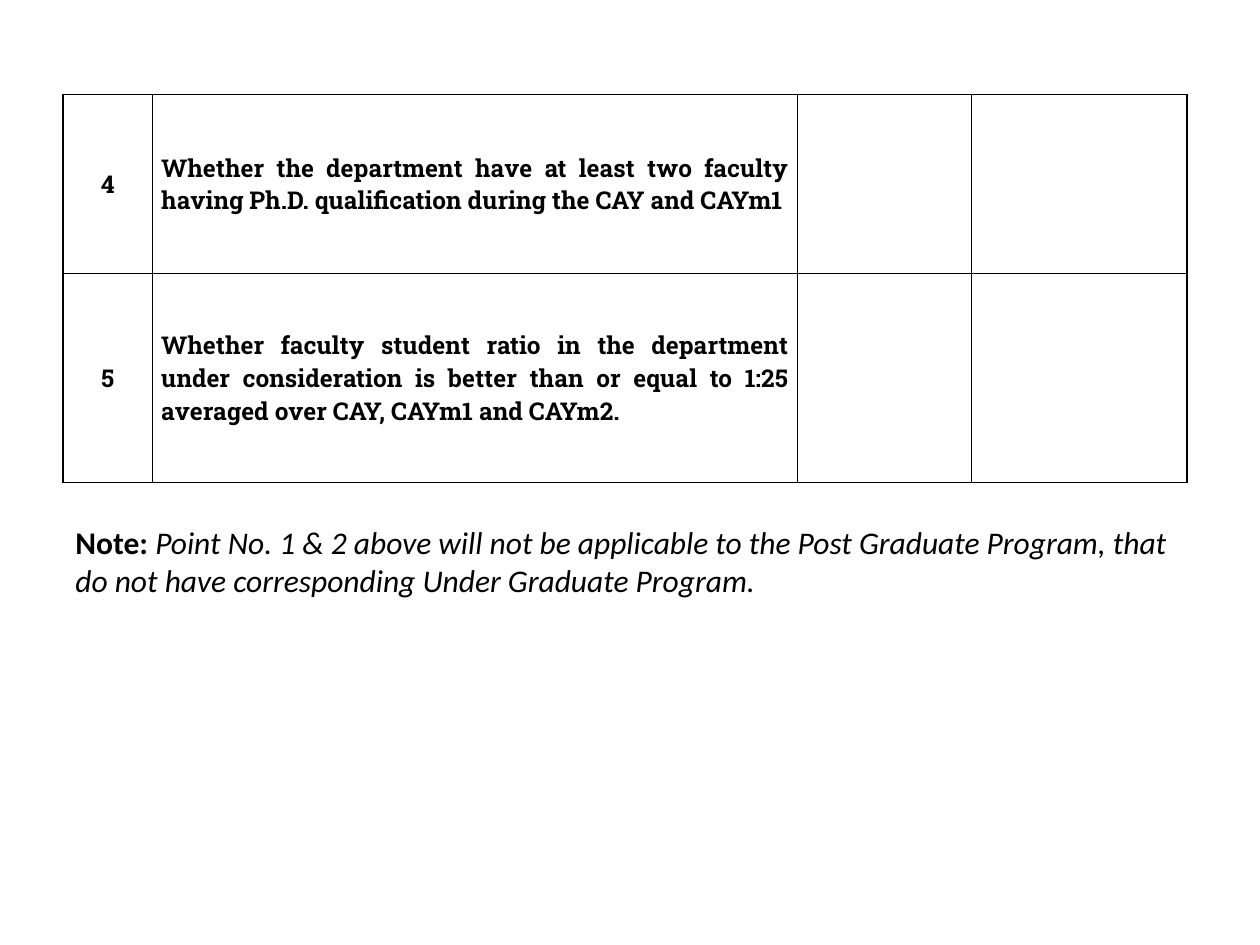
from lxml import etree
from pptx import Presentation
from pptx import util as u
from pptx.dml.color import RGBColor
from pptx.enum import text
from pptx.oxml.ns import qn

CRITERIA = [
    ("4", "Whether the department have at least two faculty having Ph.D. "
          "qualification during the CAY and CAYm1", "", ""),
    ("5", "Whether faculty student ratio in the department under consideration is "
          "better than or equal to 1:25 averaged over CAY, CAYm1 and CAYm2.", "", ""),
]
NOTE = [
    ("Note: ", {"bold": True}),
    ("Point No. 1 & 2 above will not be applicable to the Post Graduate Program, "
     "that do not have corresponding Under Graduate Program.", {"italic": True}),
]
COLUMNS = [0.71, 5.12, 1.38, 1.71]
ROWS = [1.42, 1.66]
ALIGNMENTS = [text.PP_ALIGN.CENTER, text.PP_ALIGN.JUSTIFY,
              text.PP_ALIGN.LEFT, text.PP_ALIGN.LEFT]
LEFT, TOP, NOTE_TOP, NOTE_HEIGHT = 0.5, 0.75, 4.1, 1.01
INK = "000000"
CELL_FORMAT = {"vertical_anchor": text.MSO_ANCHOR.MIDDLE,
               "margin_left": u.Inches(0.07), "margin_right": u.Inches(0.07),
               "margin_top": 0, "margin_bottom": 0}
CELL_FONT = {"name": "Roboto Slab", "size": u.Pt(14), "bold": True}
NOTE_FONT = {"name": "Calibri", "size": u.Pt(18), "bold": False}


def apply(target, values):
    for key, value in values.items():
        setattr(target, key, value)


def colour(target, value):
    target.rgb = RGBColor.from_string(value)


def write(paragraph, words, font):
    run = paragraph.add_run()
    run.text = words
    apply(run.font, font)
    colour(run.font.color, INK)


def outline(cell):
    properties = cell._tc.get_or_add_tcPr()
    for position, side in enumerate(("lnL", "lnR", "lnT", "lnB")):
        line = etree.Element(qn(f"a:{side}"), w=str(u.Pt(1)))
        fill = etree.SubElement(line, qn("a:solidFill"))
        etree.SubElement(fill, qn("a:srgbClr"), val=INK)
        properties.insert(position, line)


def add_criteria(slide):
    table = slide.shapes.add_table(
        len(ROWS), len(COLUMNS), u.Inches(LEFT), u.Inches(TOP),
        u.Inches(sum(COLUMNS)), u.Inches(sum(ROWS))).table
    apply(table, {"first_row": False, "horz_banding": False})
    for column, width in zip(table.columns, COLUMNS):
        column.width = u.Inches(width)
    for row, height, criterion in zip(table.rows, ROWS, CRITERIA):
        row.height = u.Inches(height)
        for cell, words, alignment in zip(row.cells, criterion, ALIGNMENTS):
            apply(cell, CELL_FORMAT)
            cell.fill.background()
            outline(cell)
            if words:
                paragraph = cell.text_frame.paragraphs[0]
                paragraph.alignment = alignment
                write(paragraph, words, CELL_FONT)


def add_note(slide):
    note = slide.shapes.add_textbox(
        u.Inches(LEFT), u.Inches(NOTE_TOP),
        u.Inches(sum(COLUMNS)), u.Inches(NOTE_HEIGHT)).text_frame
    note.word_wrap = True
    for words, emphasis in NOTE:
        write(note.paragraphs[0], words, {**NOTE_FONT, **emphasis})


def main():
    deck = Presentation()
    apply(deck, {"slide_width": u.Inches(10), "slide_height": u.Inches(7.5)})
    slide = deck.slides.add_slide(deck.slide_layouts[6])
    add_note(slide)
    add_criteria(slide)
    deck.save("out.pptx")


if __name__ == "__main__":
    main()
